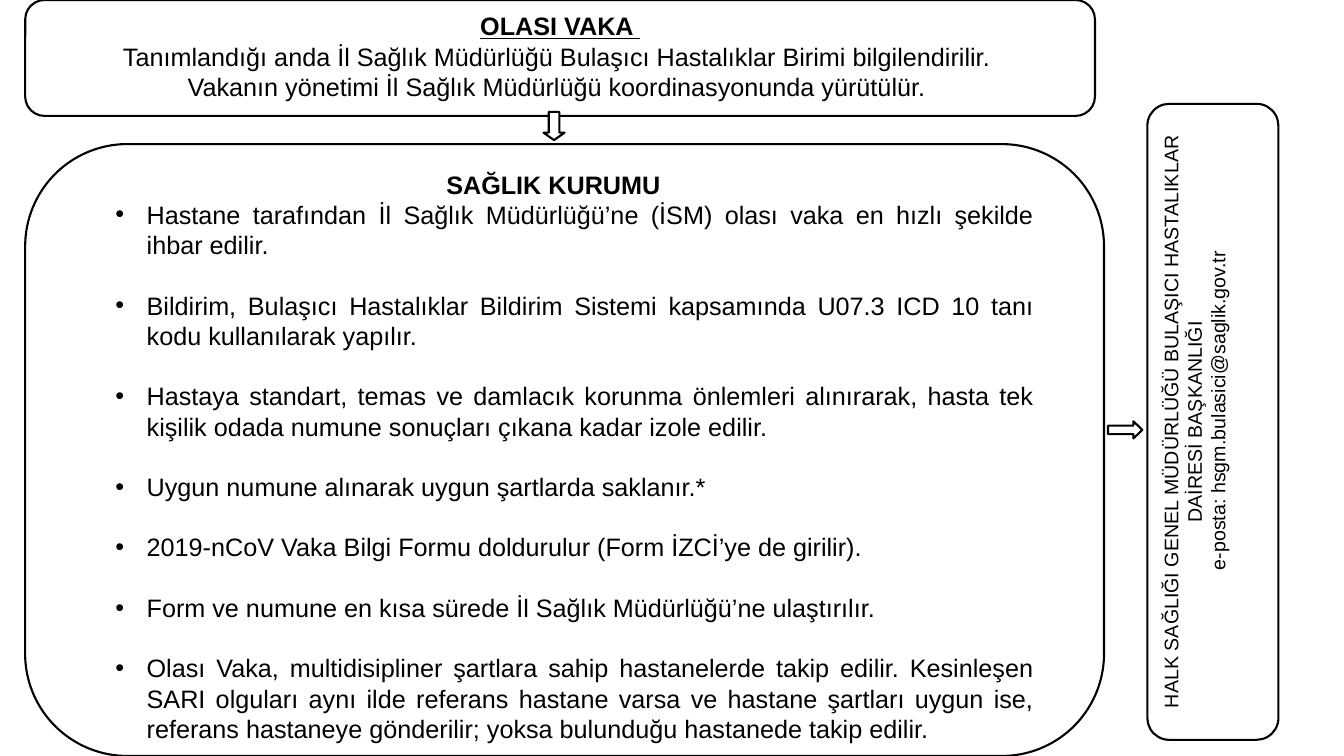
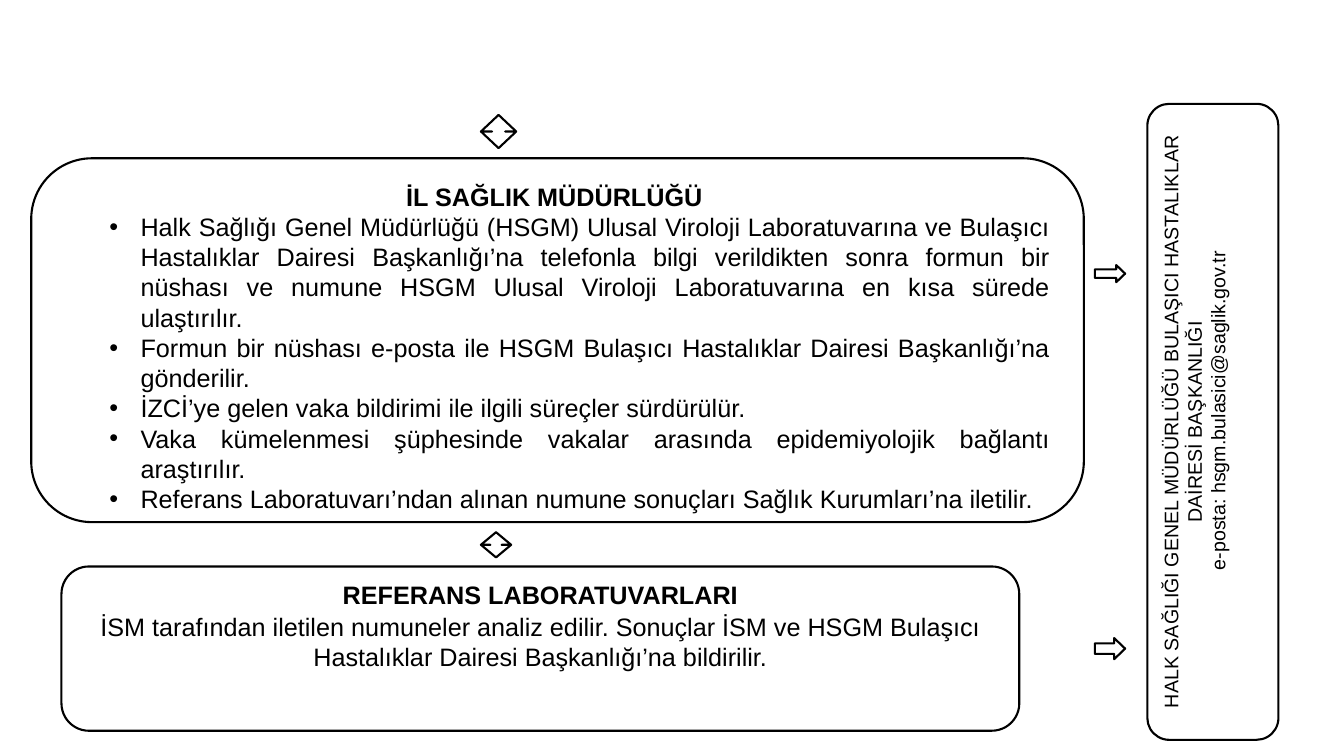
"""Build two slides on the reporting flow for a possible case."""
from lxml import etree
from pptx import Presentation
from pptx import util as u
from pptx.dml.color import RGBColor
from pptx.enum import shapes, text
from pptx.oxml.ns import qn

BLACK = RGBColor(0, 0, 0)
WHITE = RGBColor(255, 255, 255)
FONT = "Arial"
SIZE = 18
SMALL = 14
PITCH = 1.2
KIND = shapes.MSO_SHAPE
ALIGN = text.PP_ALIGN

CARE = [
    "Hastane tarafından İl Sağlık Müdürlüğü’ne (İSM) olası vaka en hızlı şekilde ihbar edilir. ",
    "Bildirim, Bulaşıcı Hastalıklar Bildirim Sistemi kapsamında U07.3 ICD 10 tanı kodu "
    "kullanılarak yapılır.",
    "Hastaya standart, temas ve damlacık korunma önlemleri alınırarak, hasta tek kişilik odada "
    "numune sonuçları çıkana kadar izole edilir.",
    "Uygun numune alınarak uygun şartlarda saklanır.*",
    "2019-nCoV Vaka Bilgi Formu doldurulur (Form İZCİ’ye de girilir).",
    "Form ve numune en kısa sürede İl Sağlık Müdürlüğü’ne ulaştırılır.",
    "Olası Vaka, multidisipliner şartlara sahip hastanelerde takip edilir. Kesinleşen SARI "
    "olguları aynı ilde referans hastane varsa ve hastane şartları uygun ise, referans "
    "hastaneye gönderilir; yoksa bulunduğu hastanede takip edilir.",
]
OFFICE = [
    "Halk Sağlığı Genel Müdürlüğü (HSGM) Ulusal Viroloji Laboratuvarına ve Bulaşıcı Hastalıklar "
    "Dairesi Başkanlığı’na telefonla bilgi verildikten sonra formun bir nüshası ve numune HSGM "
    "Ulusal Viroloji Laboratuvarına en kısa sürede ulaştırılır.",
    "Formun bir nüshası e-posta ile HSGM Bulaşıcı Hastalıklar Dairesi Başkanlığı’na gönderilir.",
    "İZCİ’ye gelen vaka bildirimi ile ilgili süreçler sürdürülür.",
    "Vaka kümelenmesi şüphesinde vakalar arasında epidemiyolojik bağlantı araştırılır.",
    "Referans Laboratuvarı’ndan alınan numune sonuçları Sağlık Kurumları’na iletilir.",
]


def add_form(slide, kind, area, *adjs):
    """Add a white shape with a black outline."""
    form = slide.shapes.add_shape(kind, *map(u.Inches, area))
    form.shadow.inherit = False
    form.fill.solid()
    form.fill.fore_color.rgb = WHITE
    form.line.color.rgb = BLACK
    form.line.width = u.Pt(1.5)
    for index, value in enumerate(adjs):
        form.adjustments[index] = value
    return form


def add_box(slide, area, right=0.1):
    """Add a rounded box and return its text frame."""
    frame = add_form(slide, KIND.ROUNDED_RECTANGLE, area, 0.167).text_frame
    frame.word_wrap = True
    frame.vertical_anchor = text.MSO_ANCHOR.TOP
    frame.margin_right = u.Inches(right)
    return frame


def add_para(frame, words, size=SIZE, bold=False, align=ALIGN.CENTER, pitch=None):
    """Fill the first free paragraph of a frame with one run."""
    para = frame.paragraphs[0]
    if para.runs:
        para = frame.add_paragraph()
    para.alignment = align
    para.line_spacing = u.Pt(pitch or size * PITCH)
    run = para.add_run()
    run.text = words
    font = run.font
    font.name, font.size, font.bold = FONT, u.Pt(size), bold
    font.color.rgb = BLACK
    return para


def add_list(frame, items, gap=0):
    """Add justified bullets with a gap between them."""
    for index, words in enumerate(items):
        para = add_para(frame, words, align=ALIGN.JUSTIFY)
        props = para._p.get_or_add_pPr()
        props.set("marL", str(u.Inches(0.81)))
        props.set("indent", str(u.Inches(-0.31)))
        etree.SubElement(props, qn("a:buFont")).set("typeface", FONT)
        etree.SubElement(props, qn("a:buChar")).set("char", "•")
        if index and gap:
            para.space_before = u.Pt(gap)


def add_side(slide):
    """Add the upright box that both slides share."""
    frame = add_box(slide, (11.38, 1.03, 1.3, 6.31))
    frame._txBody.bodyPr.set("vert", "vert270")
    add_para(frame, "HALK SAĞLIĞI GENEL MÜDÜRLÜĞÜ BULAŞICI HASTALIKLAR DAİRESİ BAŞKANLIĞI", SMALL)
    mail = add_para(frame, "e-posta: hsgm.bulasici@saglik.gov.tr", SMALL)
    mail._p.get_or_add_pPr().set("marL", str(u.Inches(0.22)))


def add_case(slide):
    """Build the slide on the possible case."""
    frame = add_box(slide, (0.25, 0, 10.61, 1.15))
    title = add_para(frame, "OLASI VAKA ", bold=True)
    title.runs[0].font.underline = True
    add_para(frame, "Tanımlandığı anda İl Sağlık Müdürlüğü Bulaşıcı Hastalıklar Birimi bilgilendirilir. ")
    add_para(frame, "Vakanın yönetimi İl Sağlık Müdürlüğü koordinasyonunda yürütülür. ")

    frame = add_box(slide, (0.25, 1.43, 10.7, 6.07), right=0.4)
    title = add_para(frame, "SAĞLIK KURUMU", bold=True, pitch=14.4)
    title._p.get_or_add_pPr().set("marL", str(u.Inches(0.08)))
    add_list(frame, CARE, gap=SIZE * PITCH)

    add_side(slide)
    add_form(slide, KIND.RIGHT_ARROW, (10.99, 4.18, 0.34, 0.17), 0.5, 0.52)
    add_form(slide, KIND.DOWN_ARROW, (5.39, 1.11, 0.21, 0.28), 0.5, 0.35)


def add_labs(slide):
    """Build the slide on the health office and the laboratories."""
    frame = add_box(slide, (0.31, 1.57, 10.44, 3.61), right=0.16)
    add_para(frame, "İL SAĞLIK MÜDÜRLÜĞÜ", bold=True)
    add_list(frame, OFFICE)

    frame = add_box(slide, (0.61, 5.62, 9.5, 1.63))
    title = add_para(frame, "REFERANS LABORATUVARLARI", bold=True)
    title.space_after = u.Pt(1)
    add_para(frame, "İSM tarafından iletilen numuneler analiz edilir. Sonuçlar İSM ve HSGM "
                    "Bulaşıcı Hastalıklar Dairesi Başkanlığı’na bildirilir.")

    for area in ((4.77, 5.28, 0.3, 0.25), (4.77, 1.14, 0.35, 0.33)):
        add_form(slide, KIND.UP_DOWN_ARROW, area, 0.5, 0.37)
    for area in ((10.86, 6.33, 0.3, 0.21), (10.86, 2.63, 0.3, 0.17)):
        add_form(slide, KIND.RIGHT_ARROW, area, 0.5, 0.52)
    add_side(slide)


def main():
    """Make the deck and save it."""
    deck = Presentation()
    deck.slide_width, deck.slide_height = u.Inches(13.33), u.Inches(7.5)
    for build in (add_case, add_labs):
        build(deck.slides.add_slide(deck.slide_layouts[6]))
    deck.save("out.pptx")


if __name__ == "__main__":
    main()
